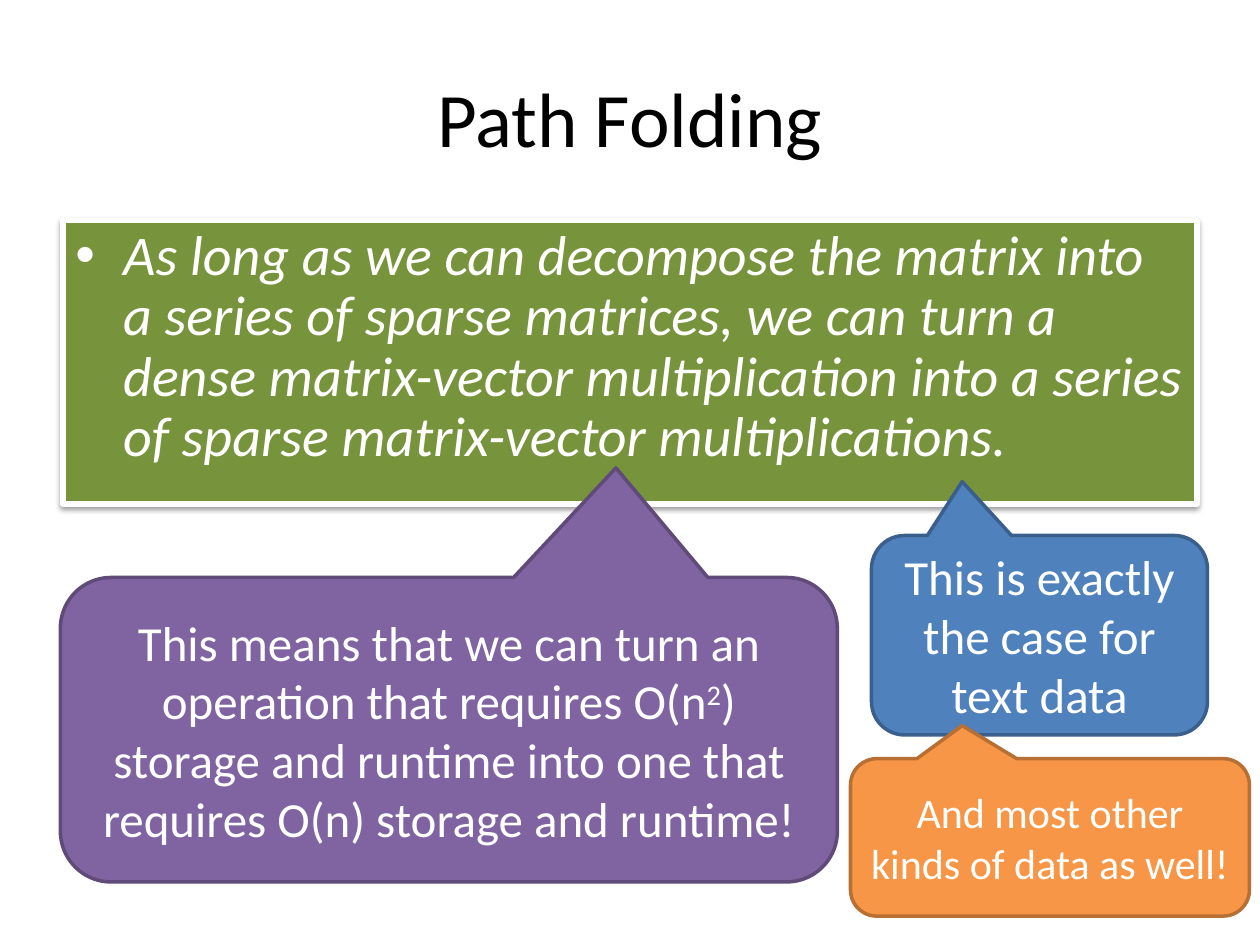
from dataclasses import dataclass

from lxml import etree
from pptx import Presentation
from pptx import util as u
from pptx.dml.color import RGBColor
from pptx.enum import shapes, text
from pptx.oxml import ns

UNIT = u.Inches(1) // 12  # the slide is a grid of 120 columns and 90 rows
COLUMNS, ROWS = 120, 90
MARGIN = 6
TITLE_ONLY = 5


@dataclass(frozen=True)
class Theme:
    font: str = "Calibri"
    ink: str = "000000"
    paper: str = "FFFFFF"
    green: str = "77933C"
    purple: tuple = ("8064A2", "5F4A78")
    blue: tuple = ("4F81BD", "3A5F8C")
    orange: tuple = ("F79646", "B76F34")
    title: int = 44
    statement: int = 32
    remark: int = 28
    aside: int = 24


THEME = Theme()


def grid(box):
    return [round(value * UNIT) for value in box]


def add_run(paragraph, wording, size, color=THEME.paper):
    run = paragraph.add_run()
    run.text = wording
    run.font.name = THEME.font
    run.font.size = u.Pt(size)
    run.font.color.rgb = RGBColor.from_string(color)
    return run


def add_panel(slide, kind, box, fill, line, line_width):
    """Add a filled, outlined shape without a shadow."""
    shape = slide.shapes.add_shape(kind, *grid(box))
    shape.fill.solid()
    shape.fill.fore_color.rgb = RGBColor.from_string(fill)
    shape.line.color.rgb = RGBColor.from_string(line)
    shape.line.width = u.Pt(line_width)
    shape.shadow.inherit = False
    shape.text_frame.word_wrap = True
    return shape


def add_soft_shadow(shape):
    effects = shape._element.spPr.find(ns.qn("a:effectLst"))
    shadow = etree.SubElement(
        effects, ns.qn("a:outerShdw"), blurRad=str(u.Pt(3.1)),
        dist=str(u.Pt(1.6)), dir="5400000", rotWithShape="0")
    color = etree.SubElement(shadow, ns.qn("a:srgbClr"), val=THEME.ink)
    etree.SubElement(color, ns.qn("a:alpha"), val="38000")


def add_bullet(paragraph, indent):
    properties = paragraph._p.get_or_add_pPr()
    properties.set("marL", str(indent))
    properties.set("indent", str(-indent))
    etree.SubElement(properties, ns.qn("a:buFont"), typeface="Arial")
    etree.SubElement(properties, ns.qn("a:buChar"), char="•")


def place_title(slide, box, wording):
    title = slide.shapes.title
    title.left, title.top, title.width, title.height = grid(box)
    title.text_frame.vertical_anchor = text.MSO_ANCHOR.MIDDLE
    paragraph = title.text_frame.paragraphs[0]
    paragraph.alignment = text.PP_ALIGN.CENTER
    add_run(paragraph, wording, THEME.title, THEME.ink)


def place_statement(slide, box, wording):
    panel = add_panel(slide, shapes.MSO_SHAPE.RECTANGLE, box,
                      THEME.green, THEME.paper, 3)
    add_soft_shadow(panel)
    panel.text_frame.vertical_anchor = text.MSO_ANCHOR.TOP
    paragraph = panel.text_frame.paragraphs[0]
    paragraph.alignment = text.PP_ALIGN.LEFT
    paragraph.line_spacing = 0.9
    add_bullet(paragraph, u.Inches(0.38))
    add_run(paragraph, wording, THEME.statement).font.italic = True


def place_callout(slide, box, tip, colors, size, wording, power="", ending=""):
    """Add a speech bubble; tip is the pointer's offset as shares of the box."""
    callout = add_panel(slide, shapes.MSO_SHAPE.ROUNDED_RECTANGULAR_CALLOUT,
                        box, *colors, 2)
    callout.adjustments[0], callout.adjustments[1] = tip
    callout.text_frame.vertical_anchor = text.MSO_ANCHOR.MIDDLE
    paragraph = callout.text_frame.paragraphs[0]
    paragraph.alignment = text.PP_ALIGN.CENTER
    add_run(paragraph, wording, size)
    if power:
        raised = add_run(paragraph, power, size)
        raised._r.get_or_add_rPr().set("baseline", "30000")
        add_run(paragraph, ending, size)


def main():
    presentation = Presentation()
    presentation.slide_width = COLUMNS * UNIT
    presentation.slide_height = ROWS * UNIT
    slide = presentation.slides.add_slide(
        presentation.slide_layouts[TITLE_ONLY])

    content_width = COLUMNS - 2 * MARGIN
    place_title(slide, (MARGIN, 3.6, content_width, 15), "Path Folding")
    place_statement(
        slide, (MARGIN, 21, content_width, 27),
        "As long as we can decompose the matrix into a series of sparse "
        "matrices, we can turn a dense matrix-vector multiplication into a "
        "series of sparse matrix-vector multiplications.")
    place_callout(
        slide, (5.75, 55, 74, 29), (0.215, -0.86), THEME.purple, THEME.remark,
        "This means that we can turn an operation that requires O(n", "2",
        ") storage and runtime into one that requires O(n) storage and "
        "runtime!")
    place_callout(
        slide, (83, 51, 32, 19), (-0.23, -0.77), THEME.blue, THEME.remark,
        "This is exactly the case for text data")
    place_callout(
        slide, (81, 72.25, 38, 15), (-0.22, -0.71), THEME.orange, THEME.aside,
        "And most other kinds of data as well!")
    presentation.save("out.pptx")


if __name__ == "__main__":
    main()
